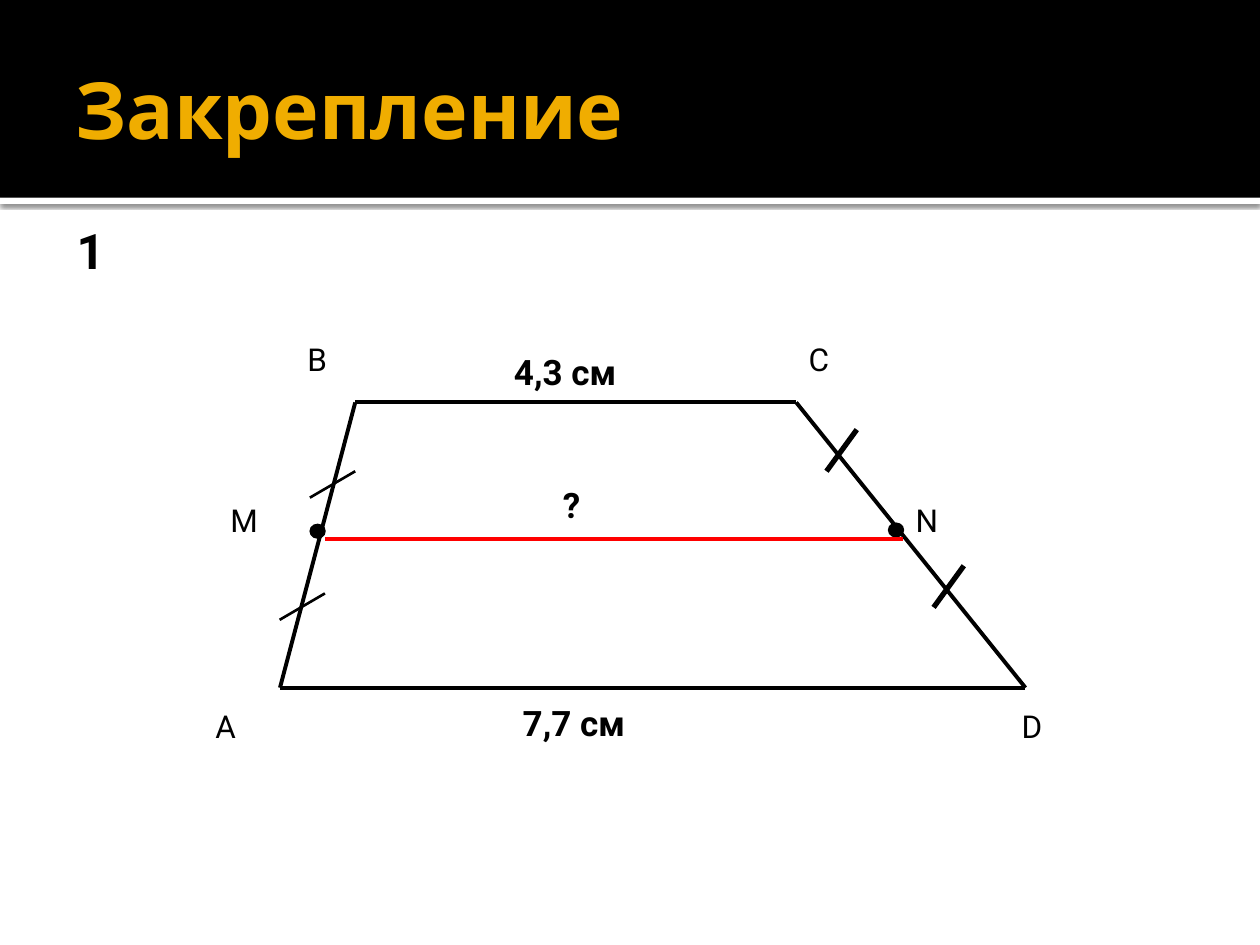
from lxml.etree import SubElement
from pptx import Presentation
from pptx.dml.color import RGBColor
from pptx.enum.shapes import MSO_CONNECTOR, MSO_SHAPE
from pptx.enum.text import MSO_ANCHOR, MSO_AUTO_SIZE, PP_ALIGN
from pptx.oxml.ns import qn
from pptx.util import Pt

COLORS = {"black": "000000", "white": "FFFFFF", "gold": "F0AD00", "red": "FF0000"}


def color(name):
    return RGBColor.from_string(COLORS[name])


def add_filled_shape(slide, kind, left, top, width, height, fill):
    shape = slide.shapes.add_shape(kind, Pt(left), Pt(top), Pt(width), Pt(height))
    shape.shadow.inherit = False
    shape.fill.solid()
    shape.fill.fore_color.rgb = color(fill)
    shape.line.fill.background()
    return shape


def add_drop_shadow(shape):
    effects = shape._element.spPr.find(qn("a:effectLst"))
    shadow = SubElement(effects, qn("a:outerShdw"), blurRad=str(Pt(2.5)),
                        dist=str(Pt(0.8)), dir="5400000", algn="t", rotWithShape="0")
    shadow_color = SubElement(shadow, qn("a:srgbClr"), val=COLORS["black"])
    SubElement(shadow_color, qn("a:alpha"), val="60000")


def add_line(slide, start, end, width, line_color="black"):
    line = slide.shapes.add_connector(
        MSO_CONNECTOR.STRAIGHT, *(Pt(value) for value in (*start, *end)))
    line.line.color.rgb = color(line_color)
    line.line.width = Pt(width)
    SubElement(line._element.spPr, qn("a:effectLst"))


def add_label(slide, text, left, top, width, height, size, bold=False):
    box = slide.shapes.add_textbox(Pt(left), Pt(top), Pt(width), Pt(height))
    box.text_frame.word_wrap = True
    box.text_frame.auto_size = MSO_AUTO_SIZE.SHAPE_TO_FIT_TEXT
    paragraph = box.text_frame.paragraphs[0]
    paragraph.text = text
    font = paragraph.font
    font.name, font.size, font.bold = "Roboto", Pt(size), bold
    font.color.rgb = color("black")


def add_header(slide, left, top, width, height):
    """Black band with a shadowed white strip below and the title inside."""
    strip = add_filled_shape(slide, MSO_SHAPE.RECTANGLE, left, top + height, width, 3.6, "white")
    add_drop_shadow(strip)
    add_filled_shape(slide, MSO_SHAPE.RECTANGLE, left, top, width, height, "black")

    title = slide.shapes.title
    title._element.getparent().append(title._element)
    title.left, title.top = Pt(left + 36), Pt(top + 12.4)
    title.width, title.height = Pt(width - 72), Pt(98.6)
    frame = title.text_frame
    frame.vertical_anchor = MSO_ANCHOR.MIDDLE
    frame.auto_size = MSO_AUTO_SIZE.NONE
    frame.margin_left = Pt(7.2)
    frame.margin_right = frame.margin_top = frame.margin_bottom = Pt(3.6)
    paragraph = frame.paragraphs[0]
    paragraph.text = "Закрепление"
    paragraph.alignment = PP_ALIGN.LEFT
    font = paragraph.font
    font.name, font.size, font.bold = "Cabin", Pt(45), True
    font.color.rgb = color("gold")


def add_trapezoid(slide, left, top):
    """Trapezoid ABCD with midline MN, equal-length ticks and labels."""
    def at(x, y):
        return left + x, top + y

    a, b, c, d = at(44, 202), at(87, 39), at(339, 39), at(470, 202)

    for name, x, y, width in (
        ("M", 8.6, 92, 34.6), ("N", 400.2, 92, 34.6),
        ("A", 0, 209.3, 61.2), ("D", 460.7, 209.3, 61.2),
        ("B", 52.5, 0, 61.2), ("C", 339, 0, 61.2),
    ):
        add_label(slide, name, *at(x, y), width, 28.8, 18)

    for x, y in ((61.2, 108.6), (391.7, 107.9)):
        dot = add_filled_shape(slide, MSO_SHAPE.FLOWCHART_CONNECTOR, *at(x, y), 8.6, 7.9, "black")
        dot.line.color.rgb = color("black")
        dot.line.width = Pt(0.75)

    for start, end in ((a, d), (c, d), (b, c), (b, a)):
        add_line(slide, start, end, 2.25)

    # Each side: first tick's upper end, tick vector, step to the second tick, width
    for (x, y), (dx, dy), (step_x, step_y), width in (
        ((87, 78.3), (-25.9, 15.1), (-17.3, 69.8), 1.5),
        ((373.6, 54.5), (-17.3, 23.8), (61.2, 77.8), 3),
    ):
        for index in range(2):
            tick_x, tick_y = x + index * step_x, y + index * step_y
            add_line(slide, at(tick_x, tick_y), at(tick_x + dx, tick_y + dy), width)

    add_line(slide, at(69.8, 117.2), at(400.2, 117.2), 2.25, "red")

    for text, x, y in (("4,3 см", 170.6, 5.6), ("7,7 см", 175.6, 206.4), ("?", 198.6, 81.9)):
        add_label(slide, text, *at(x, y), 113.8, 31, 20, bold=True)


def main():
    presentation = Presentation()
    presentation.slide_width, presentation.slide_height = Pt(720), Pt(540)
    slide = presentation.slides.add_slide(presentation.slide_layouts[5])
    add_header(slide, 0, 0, 720, 113)
    add_trapezoid(slide, 116, 191)
    add_label(slide, "1", 36.7, 122.4, 51, 41, 28, bold=True)
    presentation.save("out.pptx")


if __name__ == "__main__":
    main()
